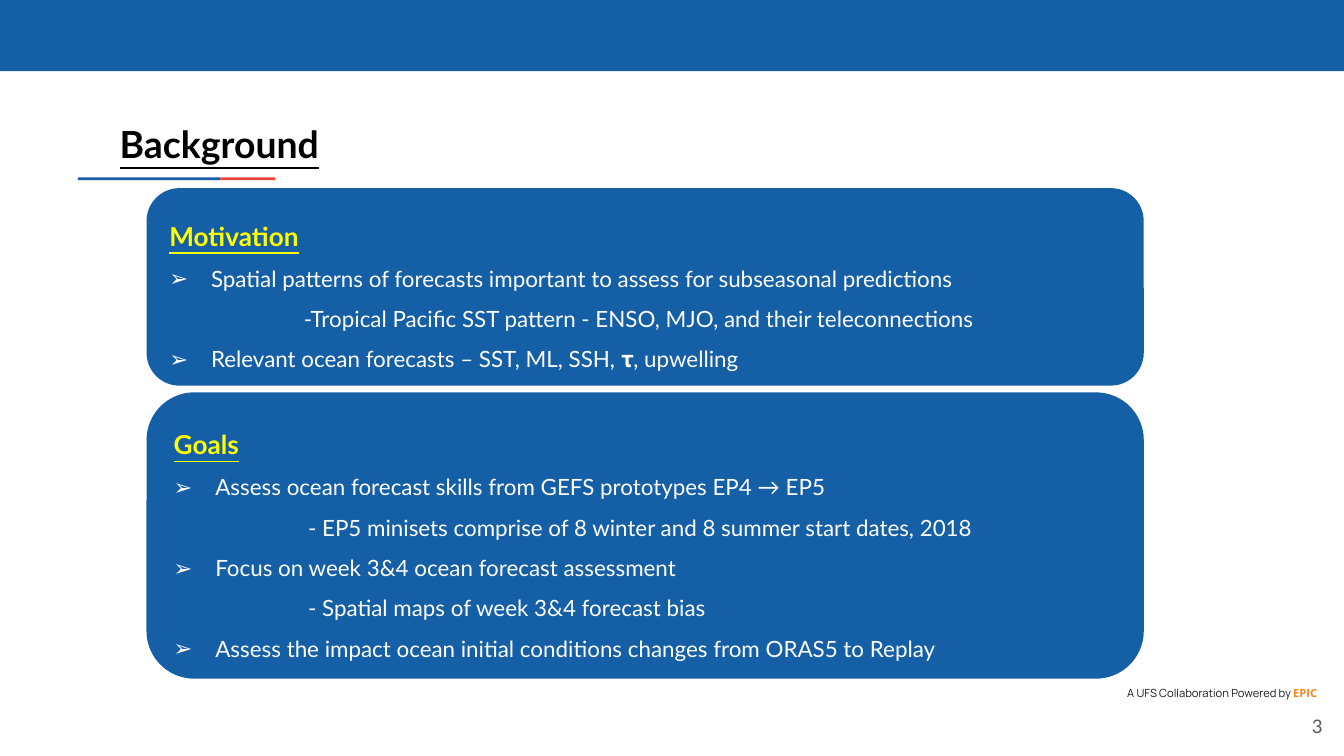
from lxml import etree
from pptx import Presentation
from pptx.dml.color import RGBColor
from pptx.enum import shapes, text
from pptx.oxml.ns import qn
from pptx.util import Inches, Pt

BLUE = RGBColor(0x14, 0x5F, 0xA6)
RED = RGBColor(0xEE, 0x42, 0x38)
YELLOW = RGBColor(0xFF, 0xFF, 0x00)
WHITE = RGBColor(0xFF, 0xFF, 0xFF)
BLACK = RGBColor(0x00, 0x00, 0x00)
INK = RGBColor(0x1A, 0x1A, 0x1A)
ORANGE = RGBColor(0xF6, 0x88, 0x22)
GREY = RGBColor(0x59, 0x59, 0x59)

BULLET, DETAIL = "bullet", "detail"
MOTIVATION = [
    (BULLET, "Spatial patterns of forecasts important to assess for subseasonal predictions"),
    (DETAIL, "-Tropical Pacific SST pattern - ENSO, MJO, and their teleconnections"),
    (BULLET, "Relevant ocean forecasts – SST, ML, SSH, 𝛕, upwelling"),
]
GOALS = [
    (BULLET, "Assess ocean forecast skills from GEFS prototypes EP4 → EP5"),
    (DETAIL, "- EP5 minisets comprise of 8 winter and 8 summer start dates, 2018"),
    (BULLET, "Focus on week 3&4 ocean forecast assessment"),
    (DETAIL, "- Spatial maps of week 3&4 forecast bias"),
    (BULLET, "Assess the impact ocean initial conditions changes from ORAS5 to Replay"),
]


def add_span(para, words, size, color, font="Lato", bold=False, underline=False):
    span = para.add_run()
    span.text = words
    span.font.name = font
    span.font.size = Pt(size)
    span.font.color.rgb = color
    span.font.bold = bold
    span.font.underline = underline


def add_block(page, kind, left, top, width, height, color):
    block = page.shapes.add_shape(
        kind, Inches(left), Inches(top), Inches(width), Inches(height))
    block.shadow.inherit = False
    block.fill.solid()
    block.fill.fore_color.rgb = color
    block.line.fill.background()
    return block


def add_right_text(page, left, top, width, height, inset):
    """Add a right-aligned text box and return its frame."""
    box = page.shapes.add_textbox(
        Inches(left), Inches(top), Inches(width), Inches(height))
    frame = box.text_frame
    frame.word_wrap = True
    frame.margin_left = frame.margin_right = Inches(inset)
    frame.margin_top = frame.margin_bottom = Inches(inset)
    frame.paragraphs[0].alignment = text.PP_ALIGN.RIGHT
    return frame


def indent(para, kind):
    """Hang an arrow bullet, or push a detail line in."""
    props = para._p.get_or_add_pPr()
    if kind == DETAIL:
        props.set("marL", str(Inches(1)))
        return
    props.set("marL", str(Inches(0.31)))
    props.set("indent", str(Inches(-0.31)))
    color = etree.SubElement(props, qn("a:buClr"))
    etree.SubElement(color, qn("a:srgbClr"), val=str(WHITE))
    etree.SubElement(props, qn("a:buFont"), typeface="Lato")
    etree.SubElement(props, qn("a:buChar"), char="➢")


def add_panel(page, top, height, heading, lines):
    panel = add_block(page, shapes.MSO_SHAPE.ROUNDED_RECTANGLE,
                      1.09, top, 7.42, height, BLUE)
    frame = panel.text_frame
    frame.word_wrap = True
    frame.vertical_anchor = text.MSO_ANCHOR.TOP
    add_span(frame.paragraphs[0], heading, 14, YELLOW, bold=True, underline=True)
    for kind, words in lines:
        para = frame.add_paragraph()
        indent(para, kind)
        add_span(para, words, 12, WHITE)
    for para in frame.paragraphs:
        para.alignment = text.PP_ALIGN.LEFT
        para.line_spacing = 1.5


def add_title(page, words):
    title = page.shapes.title
    title.left, title.top = Inches(0.79), Inches(0.85)
    title.width, title.height = Inches(1.7), Inches(0.44)
    frame = title.text_frame
    frame.word_wrap = False
    frame.vertical_anchor = text.MSO_ANCHOR.TOP
    para = frame.paragraphs[0]
    para.alignment = text.PP_ALIGN.LEFT
    add_span(para, words, 20, BLACK, bold=True, underline=True)


def main():
    deck = Presentation()
    deck.slide_width = Inches(10)
    deck.slide_height = deck.slide_width * 9 // 16
    page = deck.slides.add_slide(deck.slide_layouts[5])

    bar = shapes.MSO_SHAPE.RECTANGLE
    add_block(page, bar, 0, 0, 10, 0.53, BLUE)
    add_block(page, bar, 0.58, 1.32, 1.06, 0.02, BLUE)
    add_block(page, bar, 1.64, 1.32, 0.41, 0.02, RED)
    add_title(page, "Background")

    credit = add_right_text(page, 7.81, 5.11, 1.99, 0.1, 0).paragraphs[0]
    add_span(credit, "A UFS Collaboration Powered by ", 6, INK, "Manrope")
    add_span(credit, "EPIC", 6, ORANGE, "Open Sans", bold=True)

    add_panel(page, 1.4, 1.47, "Motivation", MOTIVATION)
    add_panel(page, 2.92, 2.13, "Goals", GOALS)

    number = add_right_text(page, 9.34, 5.19, 0.6, 0.43, 0.1)
    number.vertical_anchor = text.MSO_ANCHOR.MIDDLE
    add_span(number.paragraphs[0], "3", 10, GREY)

    deck.save("out.pptx")


if __name__ == "__main__":
    main()
